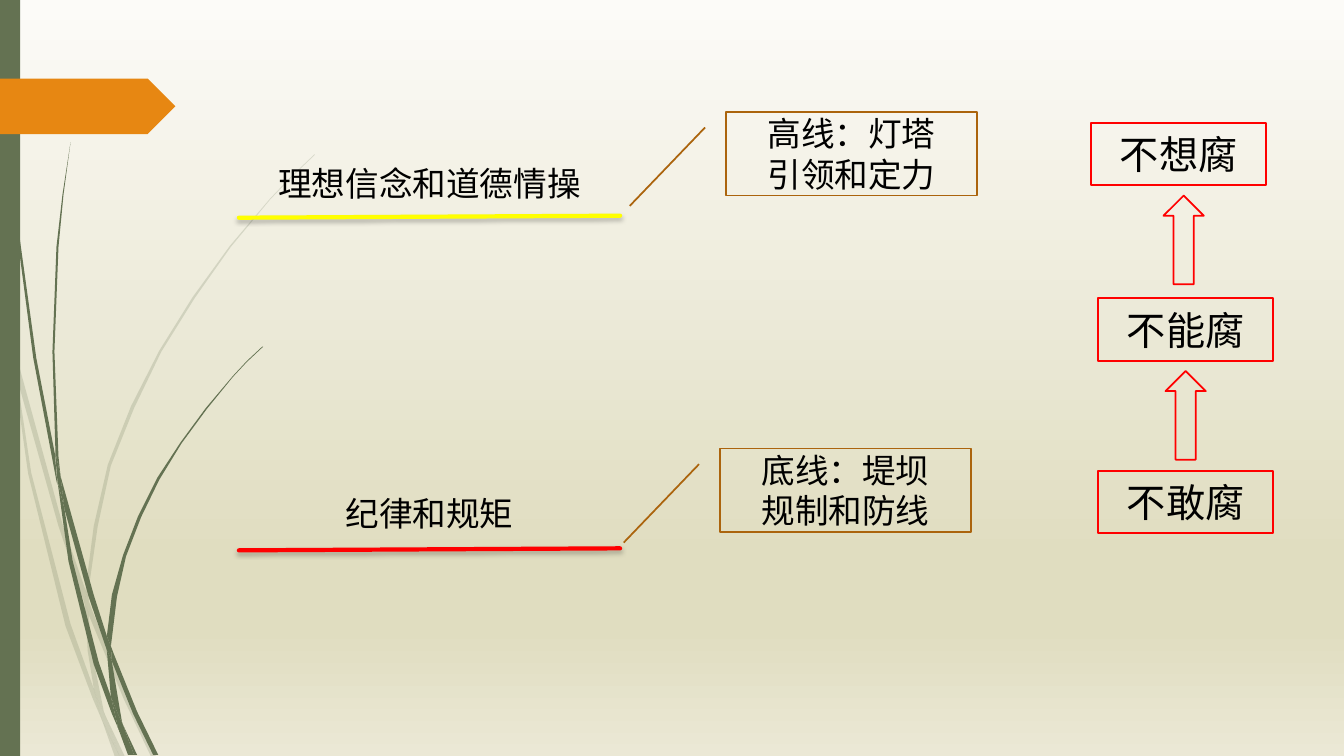
from lxml import etree
from pptx import Presentation
from pptx.dml.color import RGBColor
from pptx.enum.shapes import MSO_CONNECTOR, MSO_SHAPE
from pptx.enum.text import MSO_ANCHOR, PP_ALIGN
from pptx.oxml import parse_xml
from pptx.oxml.ns import nsdecls, qn
from pptx.util import Cm, Pt

FONT = "Noto Sans CJK SC"
GREEN, ORANGE, BROWN = "647252", "E78712", "AB640D"
RED, YELLOW, BLACK = "FF0000", "FFFF00", "000000"
BACKGROUND_STOPS = [(0, "FCFBF8"), (74, "E0DDC0"), (83, "E0DDC0"), (100, "EBE8D5")]

PALE_BLADES = [
    [(.11, 3.5), (.09, 3.22), (0, 2.82), (0, 2.99), (.1, 3.44)],
    [(.58, 5.22), (.84, 5.99), (.85, 5.86), (.62, 5.2), (.14, 3.45), (.17, 3.76)],
    [(.92, 6.07), (.88, 5.96), (.88, 6.1), (1.23, 6.94), (1.5, 7.51), (1.55, 7.51), (1.27, 6.92)],
    [(1.19, 7.51), (1.24, 7.51), (1.05, 7.11)],
    [(.93, 6.83), (.7, 6.19), (.31, 4.69), (.17, 3.76), (.11, 3.5), (.28, 4.7), (.65, 6.21),
     (.92, 6.93), (1.01, 7.14), (.99, 7.07)],
    [(.84, 5.99), (.87, 6.46), (.93, 6.83), (.96, 6.92), (1.05, 7.11), (1.03, 7.06),
     (.91, 6.46), (.88, 6.1), (.88, 6.08)],
    [(.88, 5.84), (.97, 5.22), (1.1, 4.62), (1.33, 4.05), (1.6, 3.49), (1.93, 2.96),
     (2.29, 2.45), (2.68, 1.98), (2.9, 1.75), (3.12, 1.54), (3.12, 1.53), (2.89, 1.75),
     (2.68, 1.97), (2.28, 2.44), (1.91, 2.95), (1.58, 3.48), (1.3, 4.03), (1.07, 4.61),
     (.93, 5.22), (.85, 5.84), (.85, 5.86), (.88, 5.96)],
    [(1.01, 7.14), (1.14, 7.51), (1.19, 7.51)],
    [(.88, 6.08), (.88, 6.1), (.88, 5.96), (.85, 5.86), (.84, 5.99)],
    [(.96, 6.92), (.93, 6.83), (.99, 7.07), (1.01, 7.14), (1.19, 7.51), (1.05, 7.11)],
]
DARK_BLADES = [
    [(.07, 1.1), (.17, 2.33), (.33, 3.55), (.56, 4.77), (.57, 4.81), (.55, 4.57), (.55, 4.53),
     (.36, 3.55), (.19, 2.32), (.08, 1.09), (.05, .48), (.04, 0), (.03, 0), (.04, .48)],
    [(.88, 5.92), (1.06, 6.45), (1.06, 6.33), (1.06, 6.31), (.93, 5.9), (.6, 4.72), (.64, 5.05)],
    [(1.13, 6.49), (1.1, 6.41), (1.11, 6.56), (1.32, 7.08), (1.52, 7.49), (1.57, 7.49),
     (1.36, 7.06)],
    [(1.1, 6.91), (.98, 6.57), (.72, 5.56), (.64, 5.05), (.57, 4.77), (.68, 5.57), (.93, 6.59),
     (1.11, 7.08), (1.17, 7.22), (1.16, 7.17)],
    [(.6, 4.72), (.58, 4.53), (.54, 3.49), (.58, 2.45), (.63, 1.93), (.7, 1.41), (.7, 1.41),
     (.62, 1.93), (.56, 2.45), (.52, 3.49), (.55, 4.49)],
    [(1.33, 7.49), (1.36, 7.49), (1.22, 7.19)],
    [(.57, 4.77), (.64, 5.05), (.6, 4.72), (.55, 4.49), (.55, 4.53)],
    [(1.11, 6.33), (1.16, 5.92), (1.25, 5.52), (1.4, 5.13), (1.58, 4.76), (1.8, 4.4),
     (2.05, 4.06), (2.31, 3.74), (2.45, 3.59), (2.61, 3.44), (2.6, 3.44), (2.45, 3.58),
     (2.31, 3.73), (2.04, 4.05), (1.79, 4.39), (1.56, 4.74), (1.37, 5.12), (1.22, 5.51),
     (1.11, 5.9), (1.06, 6.31), (1.1, 6.41)],
    [(1.17, 7.22), (1.27, 7.49), (1.31, 7.49)],
    [(1.06, 6.45), (1.1, 6.91), (1.16, 7.06), (1.22, 7.19), (1.21, 7.16), (1.11, 6.56),
     (1.09, 6.51)],
    [(1.06, 6.45), (1.09, 6.51), (1.11, 6.56), (1.1, 6.41), (1.06, 6.31), (1.06, 6.33)],
    [(1.16, 7.06), (1.1, 6.91), (1.16, 7.17), (1.17, 7.22), (1.3, 7.49), (1.33, 7.49),
     (1.22, 7.19)],
]


def length(inches):
    return Cm(inches * 2.54)


def lengths(*values):
    return [length(value) for value in values]


def color(hex_text):
    return RGBColor.from_string(hex_text)


def paint_background(slide):
    fill = slide.background.fill
    fill.gradient()
    fill.gradient_angle = 270
    stops = slide.element.find(".//" + qn("a:gsLst"))
    for stop in list(stops):
        stops.remove(stop)
    for percent, tone in BACKGROUND_STOPS:
        stop = etree.SubElement(stops, qn("a:gs"), pos=str(percent * 1000))
        etree.SubElement(stop, qn("a:srgbClr"), val=tone)


def fill_plain(shape, tone):
    shape.shadow.inherit = False
    shape.fill.solid()
    shape.fill.fore_color.rgb = color(tone)
    shape.line.fill.background()


def add_blades(slide, blades, opacity=100):
    group = slide.shapes.add_group_shape()
    for blade_points in blades:
        outline = [lengths(*point) for point in blade_points]
        builder = group.shapes.build_freeform(*outline[0])
        builder.add_line_segments(outline[1:], close=True)
        blade = builder.convert_to_shape()
        fill_plain(blade, GREEN)
        if opacity < 100:
            tint = blade.element.spPr.find(".//" + qn("a:srgbClr"))
            etree.SubElement(tint, qn("a:alpha"), val=str(opacity * 1000))


def add_block(slide, kind, box, tone):
    fill_plain(slide.shapes.add_shape(kind, *lengths(*box)), tone)


def write(shape, lines, size):
    frame = shape.text_frame
    frame.word_wrap = True
    frame.vertical_anchor = MSO_ANCHOR.MIDDLE
    for index, line in enumerate(lines):
        paragraph = frame.paragraphs[0] if index == 0 else frame.add_paragraph()
        paragraph.alignment = PP_ALIGN.CENTER
        run = paragraph.add_run()
        run.text = line
        run.font.size = Pt(size)
        run.font.name = FONT
        run.font.color.rgb = color(BLACK)
        etree.SubElement(run.font._element, qn("a:ea"), typeface=FONT)


def add_outlined(slide, kind, box, tone, width, lines=(), size=24):
    shape = slide.shapes.add_shape(kind, *lengths(*box))
    shape.shadow.inherit = False
    shape.fill.background()
    shape.line.color.rgb = color(tone)
    shape.line.width = Pt(width)
    if lines:
        write(shape, lines, size)


def add_label(slide, top, text):
    label = slide.shapes.add_textbox(*lengths(2.52, top, 3.48, .65))
    write(label, [text], 24)


def add_underline(slide, top, tone):
    rule = slide.shapes.add_connector(
        MSO_CONNECTOR.STRAIGHT, *lengths(2.37, top, 6.15, top - .02))
    rule.line.color.rgb = color(tone)
    rule.line.width = Pt(3)
    properties = rule._element.spPr
    properties.find(qn("a:ln")).set("cap", "rnd")
    properties.append(parse_xml(
        f'<a:effectLst {nsdecls("a")}><a:outerShdw blurRad="{Pt(3)}" dist="{Pt(2)}" '
        'dir="5400000" rotWithShape="0"><a:srgbClr val="000000"><a:alpha val="25000"/>'
        '</a:srgbClr></a:outerShdw></a:effectLst>'))


def main():
    deck = Presentation()
    deck.slide_width, deck.slide_height = lengths(13.33, 7.5)
    slide = deck.slides.add_slide(deck.slide_layouts[6])
    paint_background(slide)
    add_blades(slide, PALE_BLADES, opacity=20)
    add_blades(slide, DARK_BLADES)
    add_block(slide, MSO_SHAPE.RECTANGLE, (0, 0, .2, 7.5), GREEN)
    add_block(slide, MSO_SHAPE.PENTAGON, (0, .78, 1.74, .55), ORANGE)

    add_underline(slide, 5.46, RED)
    add_underline(slide, 2.16, YELLOW)
    for left, top, lines in [(7.14, 4.45, ["底线：堤坝", "规制和防线"]),
                             (7.2, 1.11, ["高线：灯塔", "引领和定力"])]:
        add_outlined(slide, MSO_SHAPE.LINE_CALLOUT_1, (left, top, 2.49, .83), BROWN, 1.25, lines)
    add_label(slide, 1.49, "理想信念和道德情操")
    add_label(slide, 4.76, "纪律和规矩")

    for left, top, stage in [(10.89, 4.67, "不敢腐"), (10.89, 2.96, "不能腐"),
                             (10.82, 1.22, "不想腐")]:
        add_outlined(slide, MSO_SHAPE.RECTANGLE, (left, top, 1.74, .62), RED, 1.5, [stage], 28)
    for left, top in [(11.56, 3.68), (11.54, 1.94)]:
        add_outlined(slide, MSO_SHAPE.UP_ARROW, (left, top, .4, .88), RED, 1.25)
    deck.save("out.pptx")


if __name__ == "__main__":
    main()
